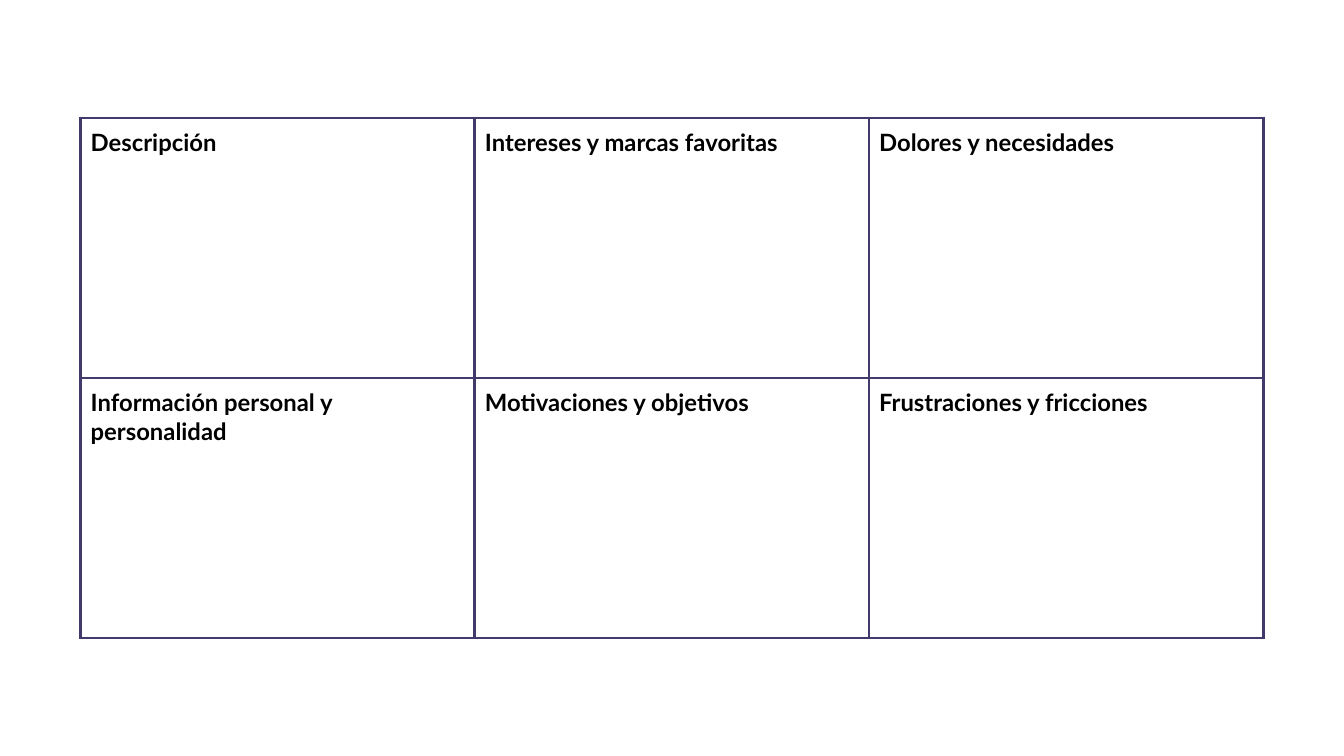
from lxml.etree import SubElement
from pptx import Presentation
from pptx.dml.color import RGBColor
from pptx.oxml.ns import qn
from pptx.util import Inches, Pt

WIDE, HIGH = 13.33, 7.5
TOPICS = [
    ["Descripción", "Intereses y marcas favoritas", "Dolores y necesidades"],
    ["Información personal y personalidad", "Motivaciones y objetivos",
     "Frustraciones y fricciones"],
]


def color(code):
    return RGBColor.from_string(code)


class Board:
    """Holds the style and the current slide."""
    font, size, ink = "Lato", 17, "000000"
    edge, weight, inset = "413A6B", 2.25, 0.1

    def __init__(self, slide):
        self.slide = slide

    def border(self, cell):
        props = cell._tc.get_or_add_tcPr()
        for side in ("lnL", "lnR", "lnT", "lnB"):
            line = SubElement(props, qn(f"a:{side}"), w=str(Pt(self.weight)))
            fill = SubElement(line, qn("a:solidFill"))
            SubElement(fill, qn("a:srgbClr"), val=self.edge)

    def label(self, cell, text):
        cell.margin_left = cell.margin_right = Inches(self.inset)
        cell.margin_top = cell.margin_bottom = Inches(self.inset)
        run = cell.text_frame.paragraphs[0].add_run()
        run.text = text
        run.font.name = self.font
        run.font.size = Pt(self.size)
        run.font.bold = True
        run.font.color.rgb = color(self.ink)

    def table(self, rows, left, top, width, height):
        """Draw a table; place and size are shares of the slide."""
        frame = self.slide.shapes.add_table(
            len(rows), len(rows[0]), Inches(left * WIDE), Inches(top * HIGH),
            Inches(width * WIDE), Inches(height * HIGH))
        grid = frame.table
        grid.first_row = grid.horz_banding = False
        for r, row in enumerate(rows):
            for c, text in enumerate(row):
                cell = grid.cell(r, c)
                self.border(cell)
                cell.fill.background()
                self.label(cell, text)


def main():
    deck = Presentation()
    deck.slide_width, deck.slide_height = Inches(WIDE), Inches(HIGH)
    board = Board(deck.slides.add_slide(deck.slide_layouts[6]))

    # Persona grid
    board.table(TOPICS, left=0.06, top=1.17 / HIGH,
                width=0.88, height=5.16 / HIGH)

    deck.save("out.pptx")


if __name__ == "__main__":
    main()
